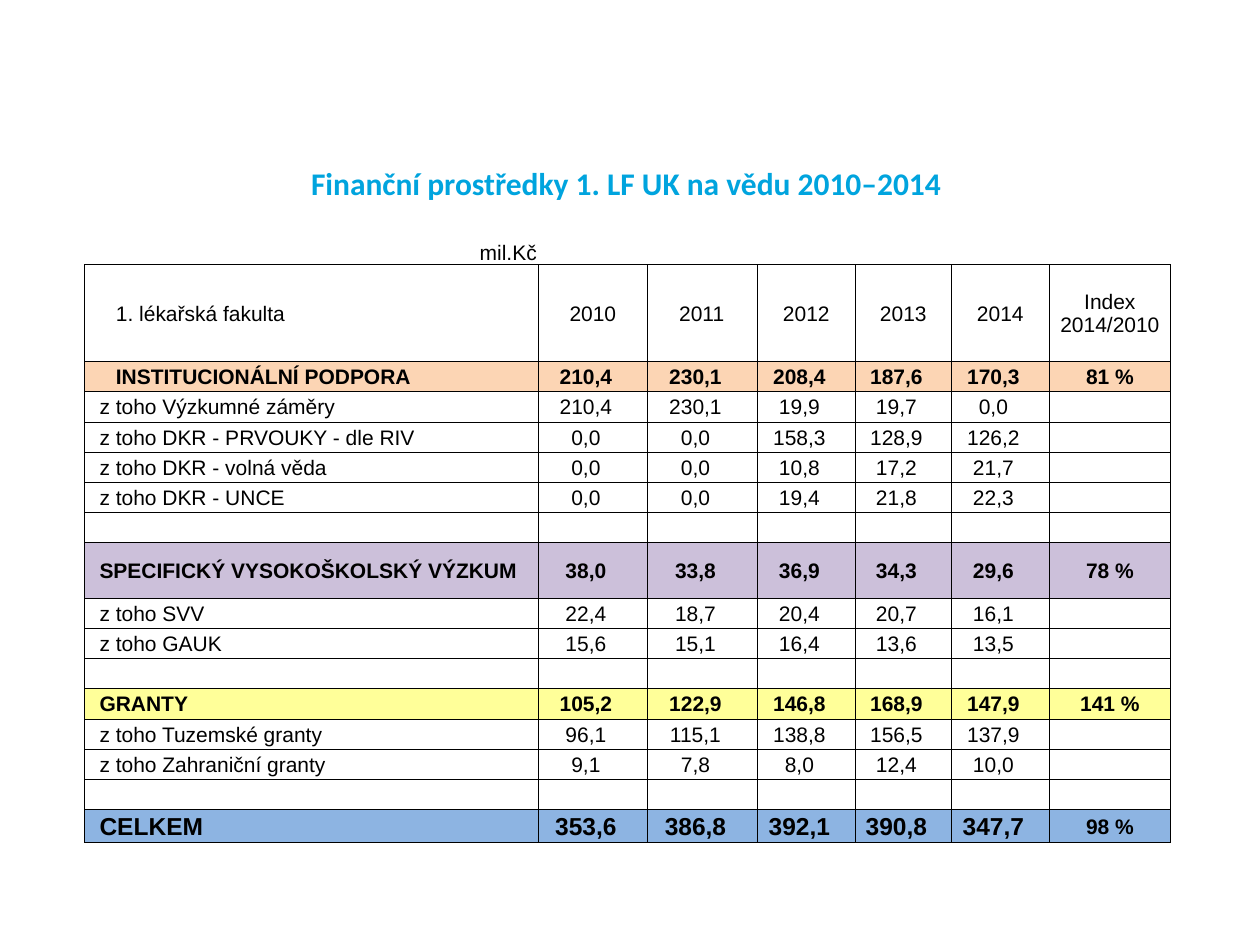
import dataclasses

import pptx
import pptx.dml.color
import pptx.enum.text
import pptx.oxml.ns
import pptx.util
from lxml import etree

Inches = pptx.util.Inches
Pt = pptx.util.Pt
qn = pptx.oxml.ns.qn
Align = pptx.enum.text.PP_ALIGN
Anchor = pptx.enum.text.MSO_ANCHOR


@dataclasses.dataclass(frozen=True)
class Theme:
    title_font: str = "Calibri"
    table_font: str = "Arial"
    title_size: int = 18
    total_size: int = 14
    body_size: int = 12
    border_width: float = 0.5
    title: str = "00A4DE"
    text: str = "000000"
    border: str = "000000"
    institutional: str = "FCD5B4"
    specific: str = "CCC0DA"
    grants: str = "FFFF99"
    total: str = "8DB4E2"


THEME = Theme()
COLUMN_WIDTHS = [3.6, 0.87, 0.87, 0.78, 0.76, 0.78, 0.96]
EDGE, INDENT, DEEP_INDENT = 0.01, 0.12, 0.25
UNIT_HEIGHT, HEADER_HEIGHT, ROW_HEIGHT = 0.23, 0.77, 0.24
SPECIFIC_HEIGHT, TOTAL_HEIGHT = 0.44, 0.26

HEADERS = ["1. lékařská fakulta", "2010", "2011", "2012", "2013", "2014", "Index\n2014/2010"]
FUNDING = [
    ("INSTITUCIONÁLNÍ PODPORA", "210,4 230,1 208,4 187,6 170,3", "81 %", THEME.institutional),
    ("z toho Výzkumné záměry", "210,4 230,1 19,9 19,7 0,0", "", None),
    ("z toho DKR - PRVOUKY - dle RIV", "0,0 0,0 158,3 128,9 126,2", "", None),
    ("z toho DKR - volná věda", "0,0 0,0 10,8 17,2 21,7", "", None),
    ("z toho DKR - UNCE", "0,0 0,0 19,4 21,8 22,3", "", None),
    None,
    ("SPECIFICKÝ VYSOKOŠKOLSKÝ VÝZKUM", "38,0 33,8 36,9 34,3 29,6", "78 %", THEME.specific),
    ("z toho SVV", "22,4 18,7 20,4 20,7 16,1", "", None),
    ("z toho GAUK", "15,6 15,1 16,4 13,6 13,5", "", None),
    None,
    ("GRANTY", "105,2 122,9 146,8 168,9 147,9", "141 %", THEME.grants),
    ("z toho Tuzemské granty", "96,1 115,1 138,8 156,5 137,9", "", None),
    ("z toho Zahraniční granty", "9,1 7,8 8,0 12,4 10,0", "", None),
    None,
    ("CELKEM", "353,6 386,8 392,1 390,8 347,7", "98 %", THEME.total),
]


def write_text(frame, text, font=THEME.table_font, size=THEME.body_size,
               color=THEME.text, bold=False, align=Align.LEFT):
    paragraph = frame.paragraphs[0]
    paragraph.text = text
    paragraph.alignment = align
    for run in paragraph.runs:
        run.font.name = font
        run.font.size = Pt(size)
        run.font.bold = bold
        run.font.color.rgb = pptx.dml.color.RGBColor.from_string(color)
    for line_break in paragraph._p.findall(qn("a:br")):
        etree.SubElement(line_break, qn("a:rPr"), sz=str(size * 100))
    if not text:
        etree.SubElement(paragraph._p, qn("a:endParaRPr"), sz=str(size * 100))


class FundingSlide:
    def __init__(self, presentation, theme):
        self.theme = theme
        self.slide = presentation.slides.add_slide(presentation.slide_layouts[6])

    def title(self, text, left, top, width, height):
        shape = self.slide.shapes.add_textbox(
            Inches(left), Inches(top), Inches(width), Inches(height))
        shape.text_frame.word_wrap = False
        shape.text_frame.auto_size = pptx.enum.text.MSO_AUTO_SIZE.SHAPE_TO_FIT_TEXT
        write_text(shape.text_frame, text, font=self.theme.title_font,
                   size=self.theme.title_size, color=self.theme.title, bold=True)

    def table(self, left, top, widths, heights):
        table = self.slide.shapes.add_table(
            len(heights), len(widths), Inches(left), Inches(top),
            Inches(sum(widths)), Inches(sum(heights))).table
        table.first_row = table.horz_banding = False
        for column, width in zip(table.columns, widths):
            column.width = Inches(width)
        for row, height in zip(table.rows, heights):
            row.height = Inches(height)
        return table

    def borders(self, cell, visible_sides):
        properties = cell._tc.get_or_add_tcPr()
        for side in "LRTB":
            line = etree.SubElement(properties, qn("a:ln" + side),
                                    w=str(Pt(self.theme.border_width)))
            if side in visible_sides:
                fill = etree.SubElement(line, qn("a:solidFill"))
                etree.SubElement(fill, qn("a:srgbClr"), val=self.theme.border)
            else:
                etree.SubElement(line, qn("a:noFill"))

    def cell(self, cell, text="", left=EDGE, right=EDGE, anchor=Anchor.MIDDLE,
             fill=None, sides="LRTB", **text_format):
        self.borders(cell, sides)
        cell.margin_left, cell.margin_right = Inches(left), Inches(right)
        cell.margin_top, cell.margin_bottom = Inches(EDGE), 0
        cell.vertical_anchor = anchor
        if fill:
            cell.fill.solid()
            cell.fill.fore_color.rgb = pptx.dml.color.RGBColor.from_string(fill)
        else:
            cell.fill.background()
        write_text(cell.text_frame, text, **text_format)

    def funding_row(self, cells, label, values, index, fill):
        bold = fill is not None
        size = self.theme.total_size if fill == self.theme.total else self.theme.body_size
        indent = DEEP_INDENT if fill == self.theme.institutional else INDENT
        self.cell(cells[0], label, left=indent, fill=fill, bold=bold, size=size)
        for cell, value in zip(cells[1:-1], values.split()):
            self.cell(cell, value, right=INDENT, fill=fill, bold=bold, size=size,
                      align=Align.CENTER)
        self.cell(cells[-1], index, fill=fill, bold=bold, align=Align.CENTER)


def row_height(entry):
    special = {THEME.specific: SPECIFIC_HEIGHT, THEME.total: TOTAL_HEIGHT}
    return special.get(entry[3], ROW_HEIGHT) if entry else ROW_HEIGHT


def main():
    presentation = pptx.Presentation()
    presentation.slide_width, presentation.slide_height = Inches(10), Inches(7.5)
    page = FundingSlide(presentation, THEME)

    heights = [UNIT_HEIGHT, HEADER_HEIGHT] + [row_height(entry) for entry in FUNDING]
    table = page.table(0.67, 1.87, COLUMN_WIDTHS, heights)
    unit_row, header_row, *funding_rows = [list(row.cells) for row in table.rows]

    for column, cell in enumerate(unit_row):
        page.cell(cell, "" if column else "mil.Kč", anchor=Anchor.BOTTOM,
                  sides="B", align=Align.RIGHT)
    for column, (cell, text) in enumerate(zip(header_row, HEADERS)):
        indented = column < 3
        page.cell(cell, text, left=DEEP_INDENT if indented else EDGE,
                  align=Align.LEFT if indented else Align.CENTER)
    for cells, entry in zip(funding_rows, FUNDING):
        if entry:
            page.funding_row(cells, *entry)
        else:
            for cell in cells:
                page.cell(cell)

    page.title("Finanční prostředky 1. LF UK na vědu 2010–2014", 2.37, 1.25, 5.25, 0.4)
    presentation.save("out.pptx")


if __name__ == "__main__":
    main()
